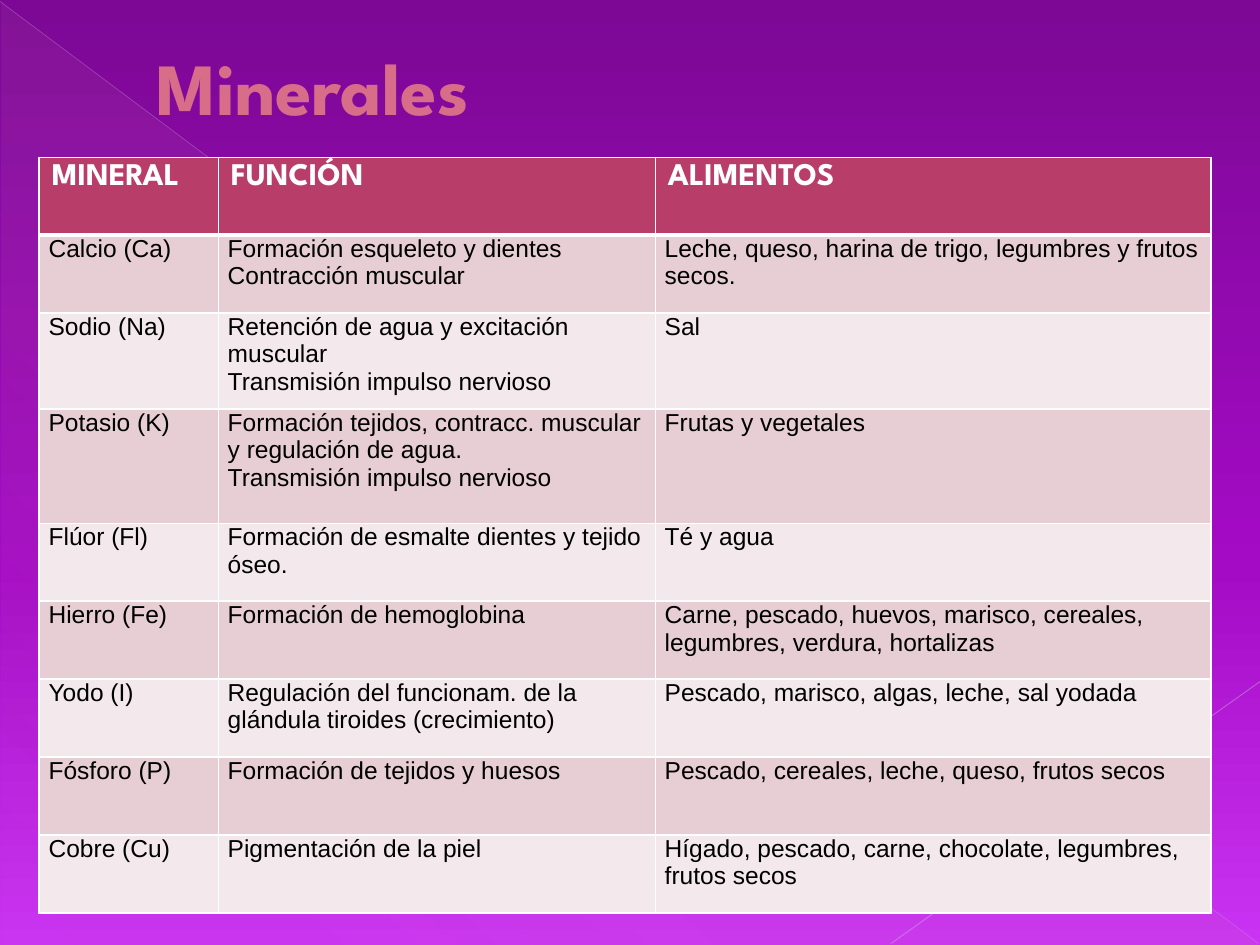
from dataclasses import dataclass

from lxml.etree import SubElement
from pptx import Presentation
from pptx.dml.color import RGBColor
from pptx.enum.shapes import MSO_CONNECTOR, MSO_SHAPE
from pptx.enum.text import MSO_ANCHOR, PP_ALIGN
from pptx.oxml.ns import qn
from pptx.util import Cm, Pt

COLORS = {
    "bg_top": "7C0895", "bg_middle": "A40BC5", "bg_bottom": "CA33F3",
    "triangle": "D787A3", "diagonal": "CEAED9", "corner": "D3B7DD",
    "title": "D86D89", "title_outline": "7F2A48",
    "header": "B83D68", "band_dark": "E6CED4", "band_light": "F3E8EB",
    "white": "FFFFFF", "black": "000000",
}
HEADING_FONT, BODY_FONT = "League Spartan", "Arial"


@dataclass
class Stop:
    position: int
    color: str
    alpha: int = 100


@dataclass
class Ray:
    start: tuple[float, float]
    end: tuple[float, float]
    color: str
    width: float
    alpha: int


@dataclass
class Mineral:
    name: str
    functions: list[str]
    foods: str
    height: float = 1.57


RAYS = [
    Ray((0, 0.03), (25.37, 19.02), "diagonal", 0.39, 35),
    Ray((25.4, 13.74), (17.96, 19.02), "corner", 0.47, 45),
]
HEADINGS = ["MINERAL", "FUNCIÓN", "ALIMENTOS"]
COLUMN_WIDTHS = [3.61, 8.81, 11.2]
HEADER_HEIGHT = 1.57
MINERALS = [
    Mineral("Calcio (Ca)", ["Formación esqueleto y dientes", "Contracción muscular"],
            "Leche, queso, harina de trigo, legumbres y frutos secos."),
    Mineral("Sodio (Na)", ["Retención de agua y excitación muscular",
                           "Transmisión impulso nervioso"], "Sal", 1.93),
    Mineral("Potasio (K)", ["Formación tejidos, contracc. muscular y regulación de agua.",
                            "Transmisión impulso nervioso"], "Frutas y vegetales", 2.31),
    Mineral("Flúor (Fl)", ["Formación de esmalte dientes y tejido óseo."], "Té y agua"),
    Mineral("Hierro (Fe)", ["Formación de hemoglobina"],
            "Carne, pescado, huevos, marisco, cereales, legumbres, verdura, hortalizas"),
    Mineral("Yodo (I)", ["Regulación del funcionam. de la glándula tiroides (crecimiento)"],
            "Pescado, marisco, algas, leche, sal yodada"),
    Mineral("Fósforo (P)", ["Formación de tejidos y huesos"],
            "Pescado, cereales, leche, queso, frutos secos"),
    Mineral("Cobre (Cu)", ["Pigmentación de la piel"],
            "Hígado, pescado, carne, chocolate, legumbres, frutos secos"),
]


def rgb(color: str) -> RGBColor:
    return RGBColor.from_string(COLORS[color])


def add_color(parent, color: str, alpha: int = 100) -> None:
    value = SubElement(parent, qn("a:srgbClr"), val=COLORS[color])
    if alpha < 100:
        SubElement(value, qn("a:alpha"), val=str(alpha * 1000))


def set_gradient(fill, element, stops: list[Stop], clockwise_angle: int) -> None:
    fill.gradient()
    fill.gradient_angle = 360 - clockwise_angle
    stop_list = next(element.iter(qn("a:gsLst")))
    for old_stop in list(stop_list):
        stop_list.remove(old_stop)
    for stop in stops:
        item = SubElement(stop_list, qn("a:gs"), pos=str(stop.position * 1000))
        add_color(item, stop.color, stop.alpha)


def add_ray(slide, ray: Ray) -> None:
    points = [Cm(value) for value in (*ray.start, *ray.end)]
    line = slide.shapes.add_connector(MSO_CONNECTOR.STRAIGHT, *points)
    line.line.width = Pt(ray.width)
    line.line.color.rgb = rgb(ray.color)
    properties = line._element.spPr
    color = next(properties.iter(qn("a:srgbClr")))
    SubElement(color, qn("a:alpha"), val=str(ray.alpha * 1000))
    SubElement(properties, qn("a:effectLst"))


def add_run(paragraph, text: str, size: float, font: str, color: str, bold: bool):
    run = paragraph.add_run()
    run.text = text
    run.font.size = Pt(size)
    run.font.name = font
    run.font.bold = bold
    run.font.color.rgb = rgb(color)
    return run


def add_title(slide, text: str) -> None:
    title = slide.shapes.title
    title.left, title.top, title.width, title.height = Cm(1.55), Cm(-0.2), Cm(22.86), Cm(3.89)
    title.text_frame.vertical_anchor = MSO_ANCHOR.MIDDLE
    paragraph = title.text_frame.paragraphs[0]
    paragraph.alignment = PP_ALIGN.LEFT
    paragraph._p.get_or_add_pPr().set("marL", str(Cm(1.35)))
    run = add_run(paragraph, text, 42, HEADING_FONT, "title", True)
    # The outline has to come first among the run properties
    properties = run._r.get_or_add_rPr()
    outline = SubElement(properties, qn("a:ln"), w=str(Pt(0.5)))
    add_color(SubElement(outline, qn("a:solidFill")), "title_outline")
    properties.insert(0, outline)
    # Bring the title in front of the decoration
    slide.shapes._spTree.append(title._element)


def set_borders(cell, top: float, bottom: float) -> None:
    properties = cell._tc.get_or_add_tcPr()
    for side, width in {"L": 1, "R": 1, "T": top, "B": bottom}.items():
        border = SubElement(properties, qn(f"a:ln{side}"), w=str(Pt(width)))
        add_color(SubElement(border, qn("a:solidFill")), "white")


def fill_cell(cell, lines: list[str], row: int) -> None:
    is_header = row == 0
    set_borders(cell, top=3 if row == 1 else 1, bottom=3 if is_header else 1)
    band = "header" if is_header else ("band_dark" if row % 2 else "band_light")
    cell.fill.solid()
    cell.fill.fore_color.rgb = rgb(band)
    if not is_header:
        cell.margin_left = cell.margin_right = Cm(0.19)
        cell.margin_top = cell.margin_bottom = 0
    for index, line in enumerate(lines):
        frame = cell.text_frame
        paragraph = frame.add_paragraph() if index else frame.paragraphs[0]
        if is_header:
            add_run(paragraph, line, 18, HEADING_FONT, "white", True)
        else:
            add_run(paragraph, line, 14, BODY_FONT, "black", False)


def add_mineral_table(slide) -> None:
    heights = [HEADER_HEIGHT] + [mineral.height for mineral in MINERALS]
    table = slide.shapes.add_table(
        len(heights), len(HEADINGS), Cm(0.79), Cm(3.17),
        Cm(sum(COLUMN_WIDTHS)), Cm(sum(heights))).table
    for column, width in zip(table.columns, COLUMN_WIDTHS):
        column.width = Cm(width)
    contents = [[[heading] for heading in HEADINGS]]
    contents += [[[m.name], m.functions, [m.foods]] for m in MINERALS]
    for row, (height, cells) in enumerate(zip(heights, contents)):
        table.rows[row].height = Cm(height)
        for column, lines in enumerate(cells):
            fill_cell(table.cell(row, column), lines, row)


def main() -> None:
    presentation = Presentation()
    presentation.slide_width, presentation.slide_height = Cm(25.4), Cm(19.05)
    slide = presentation.slides.add_slide(presentation.slide_layouts[5])

    # Background
    set_gradient(slide.background.fill, slide._element,
                 [Stop(0, "bg_top"), Stop(60, "bg_middle"), Stop(100, "bg_bottom")], 90)

    # Translucent triangle and crossing rays
    triangle = slide.shapes.add_shape(
        MSO_SHAPE.RIGHT_TRIANGLE, Cm(0.03), Cm(0.05), Cm(25.35), Cm(19))
    triangle.shadow.inherit = False
    triangle.line.fill.background()
    set_gradient(triangle.fill, triangle._element,
                 [Stop(0, "triangle", 10), Stop(70, "triangle", 8),
                  Stop(100, "triangle", 1)], 133)
    for ray in RAYS:
        add_ray(slide, ray)

    # Title and table
    add_title(slide, "Minerales")
    add_mineral_table(slide)
    presentation.save("out.pptx")


if __name__ == "__main__":
    main()
